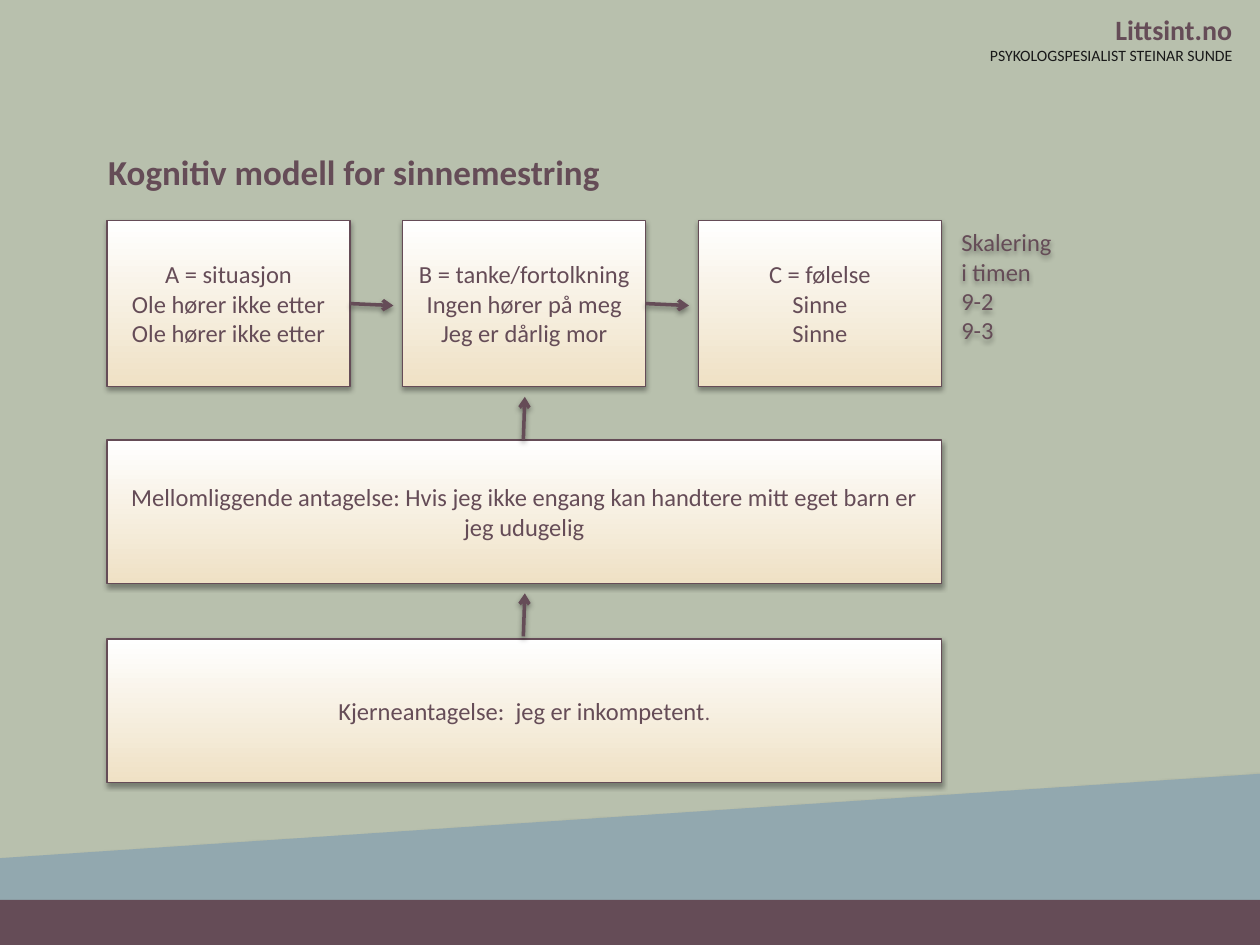
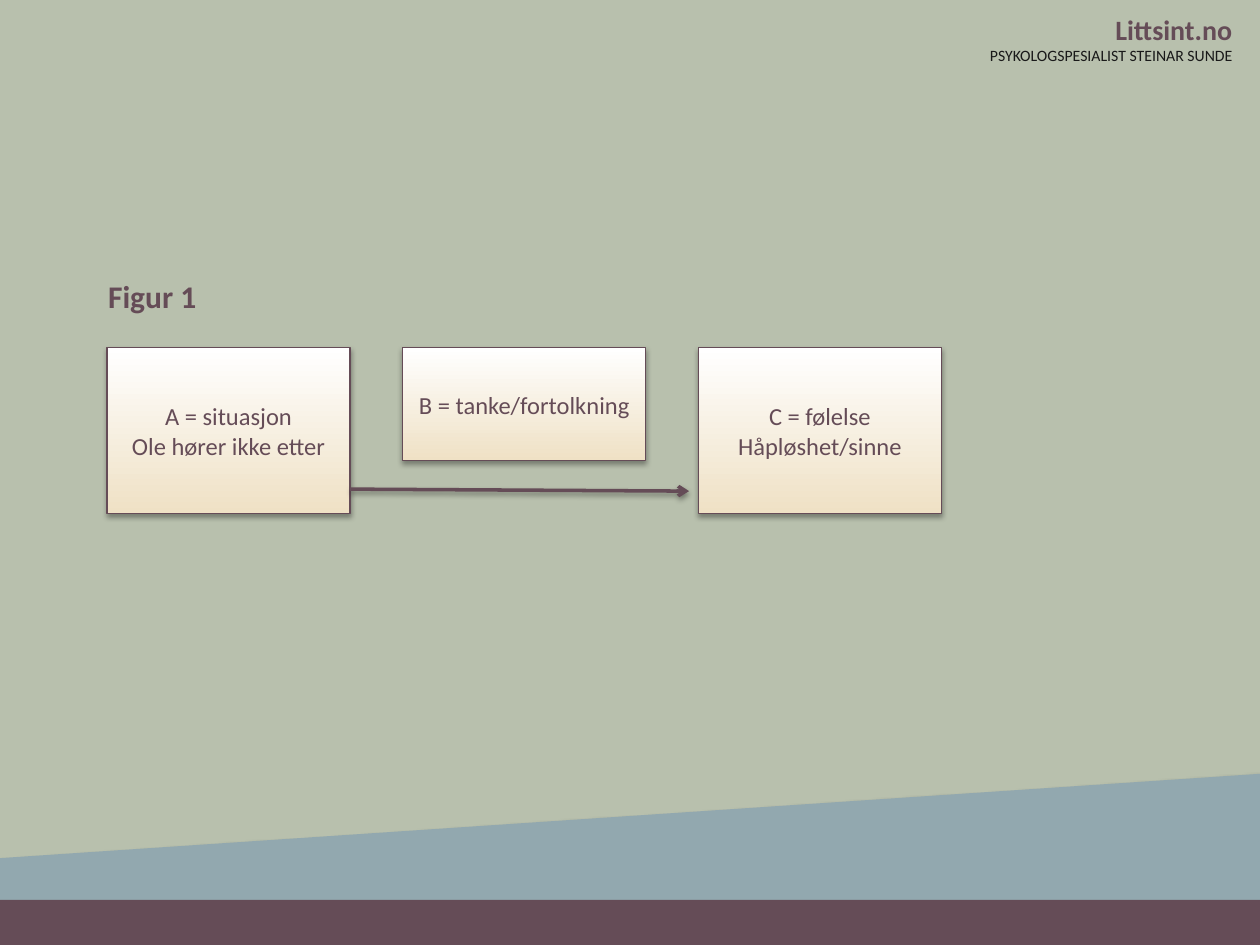
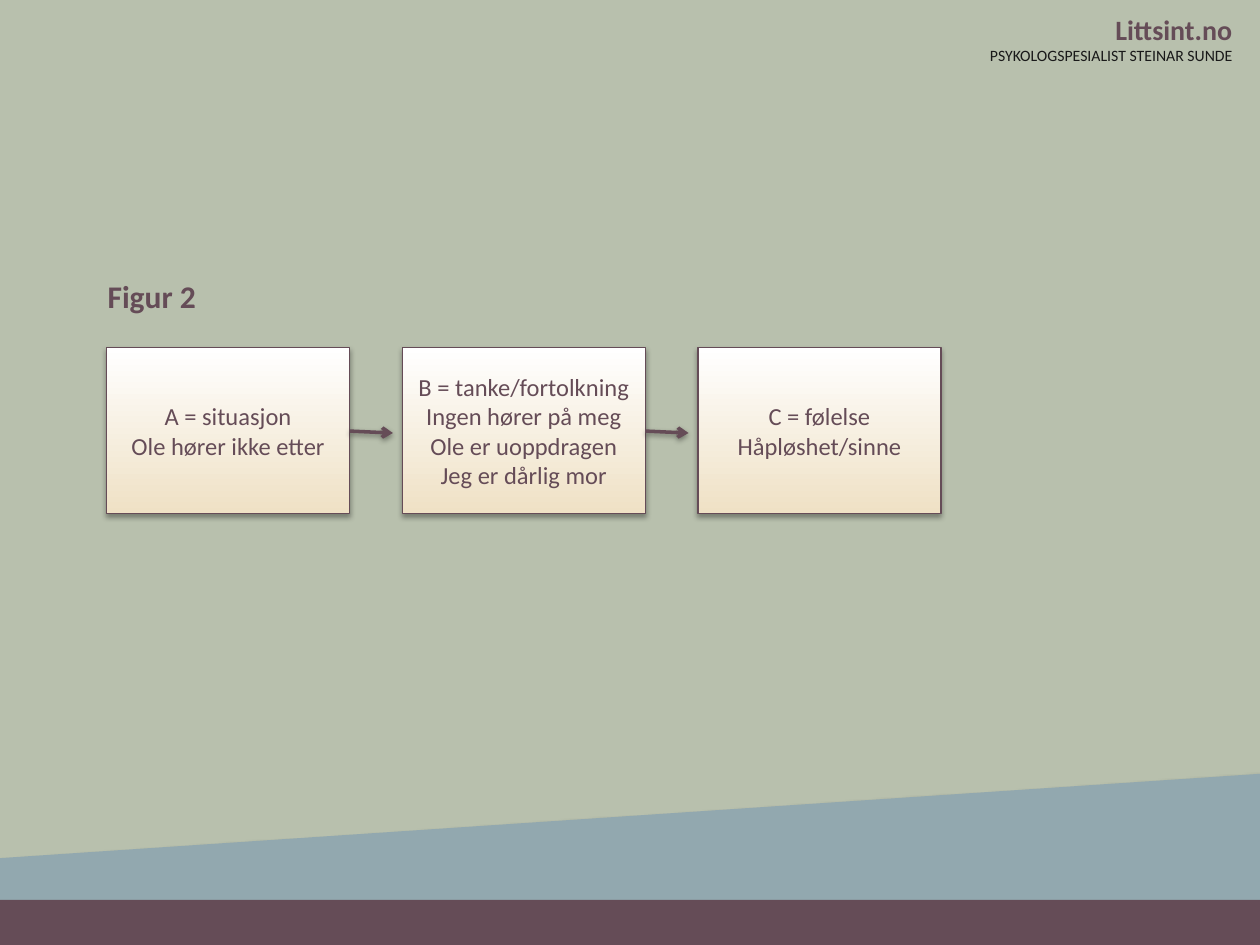
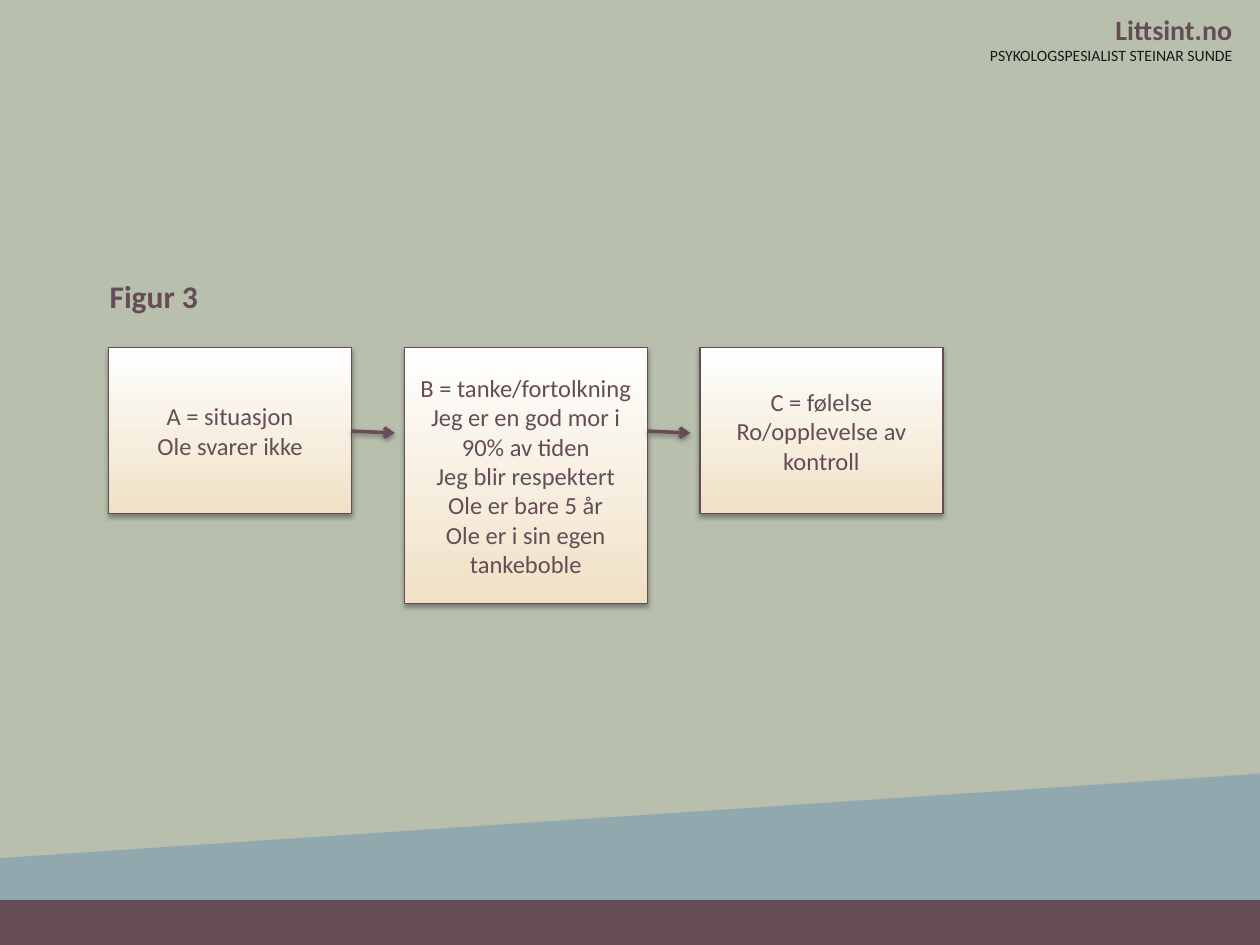
import lxml.etree
import pptx
import pptx.dml.color
import pptx.enum.dml
import pptx.enum.shapes
import pptx.enum.text
import pptx.oxml.ns
import pptx.util

Cm = pptx.util.Cm
Pt = pptx.util.Pt
RGBColor = pptx.dml.color.RGBColor
ALIGN = pptx.enum.text.PP_ALIGN
ANCHOR = pptx.enum.text.MSO_ANCHOR
RECTANGLE = pptx.enum.shapes.MSO_SHAPE.RECTANGLE
STRAIGHT = pptx.enum.shapes.MSO_CONNECTOR.STRAIGHT
qn = pptx.oxml.ns.qn

# Colours and font
PLUM = RGBColor(0x65, 0x4C, 0x57)
SAGE = RGBColor(0xB8, 0xC0, 0xAD)
BLUE = RGBColor(0x92, 0xA8, 0xAF)
CREAM = RGBColor(0xEF, 0xE1, 0xC5)
WHITE = RGBColor(0xFF, 0xFF, 0xFF)
BLACK = RGBColor(0x19, 0x19, 0x19)
FONT = "Calibri"

# Shared measures in centimetres
PAGE_WIDTH, PAGE_HEIGHT = 25.4, 19.05
BAND_TOP = 18.14
BOX_WIDTH, BOX_HEIGHT = 4.9, 3.35
COLUMN_STEP = 5.96
WIDE_WIDTH, WIDE_HEIGHT = 2 * COLUMN_STEP + BOX_WIDTH, 2.89
ARROW_LENGTH = 0.87


def cast_shadow(shape, opacity=35, distance=1.8):
    """Give a shape a soft shadow straight below it."""
    effects = lxml.etree.SubElement(shape._element.spPr, qn("a:effectLst"))
    shadow = lxml.etree.SubElement(
        effects, qn("a:outerShdw"), blurRad=str(Pt(3.1)),
        dist=str(Pt(distance)), dir="5400000", rotWithShape="0")
    colour = lxml.etree.SubElement(shadow, qn("a:srgbClr"), val="000000")
    lxml.etree.SubElement(colour, qn("a:alpha"), val=str(opacity * 1000))


def write_text(shape, lines, size, align=ALIGN.LEFT, bold=False):
    """Write one paragraph per line; a line is a text or a list of (text, size)."""
    frame = shape.text_frame
    frame.word_wrap = True
    for number, line in enumerate(lines):
        paragraph = frame.add_paragraph() if number else frame.paragraphs[0]
        paragraph.alignment = align
        for text, span_size in line if isinstance(line, list) else [(line, size)]:
            for row, part in enumerate(text.split("\n")):
                if row:
                    paragraph.add_line_break()
                span = paragraph.add_run()
                span.text = part
                span.font.name = FONT
                span.font.size = Pt(span_size)
                span.font.bold = bold
                span.font.color.rgb = PLUM


# Contents: boxes are (left, top, width, height, lines) and arrows are
# (from x, from y, to x, to y), with x measured from the left of box A
MIDDLE = COLUMN_STEP + BOX_WIDTH / 2
B_LEFT, C_LEFT = COLUMN_STEP, 2 * COLUMN_STEP
ROW_TOP, FIGURE_TOP = 4.44, 7.01


figures = [
    {
        "title": "Kognitiv modell for sinnemestring", "size": 20,
        "title_top": 2.9, "left": 2.16,
        "boxes": [
            (0, ROW_TOP, BOX_WIDTH, BOX_HEIGHT,
             ["A = situasjon", "Ole hører ikke etter", "Ole hører ikke etter"]),
            (B_LEFT, ROW_TOP, BOX_WIDTH, BOX_HEIGHT,
             ["B = tanke/fortolkning", "Ingen hører på meg", "Jeg er dårlig mor"]),
            (C_LEFT, ROW_TOP, BOX_WIDTH, BOX_HEIGHT,
             ["C = følelse", "Sinne", "Sinne"]),
            (0, 8.87, WIDE_WIDTH, WIDE_HEIGHT,
             ["Mellomliggende antagelse: Hvis jeg ikke engang kan handtere "
              "mitt eget barn er jeg udugelig"]),
            (0, 12.88, WIDE_WIDTH, WIDE_HEIGHT,
             [[("Kjerneantagelse:  jeg er inkompetent", 14), (".", 12)]]),
        ],
        "row_arrows": 6.12,
        "arrows": [(MIDDLE - 0.02, start, MIDDLE + 0.01, start - ARROW_LENGTH)
                   for start in (8.87, 12.83)],
    },
    {
        "title": "Figur 1", "size": 18, "title_top": 5.46, "left": 2.16,
        "boxes": [
            (0, FIGURE_TOP, BOX_WIDTH, BOX_HEIGHT,
             ["A = situasjon\nOle hører ikke etter"]),
            (B_LEFT, FIGURE_TOP, BOX_WIDTH, 2.28, ["B = tanke/fortolkning"]),
            (C_LEFT, FIGURE_TOP, BOX_WIDTH, BOX_HEIGHT,
             ["C = følelse", "Håpløshet/sinne"]),
        ],
        "row_arrows": None,
        "arrows": [(BOX_WIDTH, 9.86, BOX_WIDTH + COLUMN_STEP + ARROW_LENGTH, 9.9)],
    },
    {
        "title": "Figur 2", "size": 18, "title_top": 5.46, "left": 2.15,
        "boxes": [
            (0, FIGURE_TOP, BOX_WIDTH, BOX_HEIGHT,
             ["A = situasjon\nOle hører ikke etter"]),
            (B_LEFT, FIGURE_TOP, BOX_WIDTH, BOX_HEIGHT,
             ["B = tanke/fortolkning", "Ingen hører på meg",
              "Ole er uoppdragen", "Jeg er dårlig mor"]),
            (C_LEFT, FIGURE_TOP, BOX_WIDTH, BOX_HEIGHT,
             ["C = følelse", "Håpløshet/sinne"]),
        ],
        "row_arrows": 8.69,
        "arrows": [],
    },
    {
        "title": "Figur 3", "size": 18, "title_top": 5.46, "left": 2.19,
        "boxes": [
            (0, FIGURE_TOP, BOX_WIDTH, BOX_HEIGHT,
             ["A = situasjon\nOle svarer ikke"]),
            (B_LEFT, FIGURE_TOP, BOX_WIDTH, 5.16,
             ["B = tanke/fortolkning", "Jeg er en god mor i 90% av tiden",
              "Jeg blir respektert", "Ole er bare 5 år",
              "Ole er i sin egen tankeboble"]),
            (C_LEFT, FIGURE_TOP, BOX_WIDTH, BOX_HEIGHT,
             ["C = følelse", "Ro/opplevelse av kontroll"]),
        ],
        "row_arrows": 8.69,
        "arrows": [],
    },
]

deck = pptx.Presentation()
deck.slide_width = Cm(PAGE_WIDTH)
deck.slide_height = Cm(PAGE_HEIGHT)

for figure in figures:
    page = deck.slides.add_slide(deck.slide_layouts[6])
    shapes = page.shapes
    left = figure["left"]

    # Background and sloping band
    backdrop = shapes.add_shape(RECTANGLE, 0, 0, Cm(PAGE_WIDTH), Cm(BAND_TOP))
    outline = shapes.build_freeform(0, Cm(17.3))
    outline.add_line_segments(
        [(Cm(PAGE_WIDTH), Cm(15.6)), (Cm(PAGE_WIDTH), Cm(19)), (0, Cm(19))])
    slope = outline.convert_to_shape()
    for area, colour in ((backdrop, SAGE), (slope, BLUE)):
        area.fill.solid()
        area.fill.fore_color.rgb = colour
        area.line.fill.background()
        cast_shadow(area)

    # Sender in the top right corner
    sender = shapes.add_textbox(Cm(18.49), Cm(0.13), Cm(6.6), Cm(1.37))
    write_text(sender, ["Littsint.no", [("PSYKOLOGSPESIALIST STEINAR SUNDE", 9)]],
               16, ALIGN.RIGHT, bold=True)
    role = sender.text_frame.paragraphs[1].runs[0]
    role.font.bold = False
    role.font.color.rgb = BLACK

    # Bottom band
    band = shapes.add_shape(RECTANGLE, 0, Cm(BAND_TOP), Cm(PAGE_WIDTH),
                            Cm(PAGE_HEIGHT - BAND_TOP))
    band.shadow.inherit = False
    band.fill.solid()
    band.fill.fore_color.rgb = PLUM
    band.line.fill.background()

    # Boxes of the model
    for x, top, width, height, lines in figure["boxes"]:
        box = shapes.add_shape(RECTANGLE, Cm(left + x), Cm(top), Cm(width), Cm(height))
        box.fill.gradient()
        box.fill.gradient_angle = 90
        for stop, colour in zip(box.fill.gradient_stops, (CREAM, WHITE)):
            stop.color.rgb = colour
        box.line.color.rgb = PLUM
        box.line.width = Pt(0.75)
        cast_shadow(box)
        box.text_frame.vertical_anchor = ANCHOR.MIDDLE
        write_text(box, lines, 14, ALIGN.CENTER)

    # Arrows: between neighbouring columns, then the others
    arrows = list(figure["arrows"])
    if figure["row_arrows"]:
        for column in range(2):
            start = column * COLUMN_STEP + BOX_WIDTH
            arrows.append((start, figure["row_arrows"],
                           start + ARROW_LENGTH, figure["row_arrows"] + 0.04))
    for from_x, from_y, to_x, to_y in arrows:
        arrow = shapes.add_connector(STRAIGHT, Cm(left + from_x), Cm(from_y),
                                     Cm(left + to_x), Cm(to_y))
        arrow.line.color.rgb = PLUM
        arrow.line.width = Pt(2)
        lxml.etree.SubElement(arrow.line._get_or_add_ln(), qn("a:tailEnd"), type="arrow")
        cast_shadow(arrow, opacity=38, distance=1.6)

    # Title
    title = shapes.add_textbox(Cm(left - 0.23), Cm(figure["title_top"]),
                               Cm(WIDE_WIDTH), Cm(1.02))
    write_text(title, [figure["title"]], figure["size"], bold=True)

# Scaling note beside the first model
note = deck.slides[0].shapes.add_textbox(Cm(19.13), Cm(4.09), Cm(3.53), Cm(BOX_HEIGHT))
note.text_frame.vertical_anchor = ANCHOR.MIDDLE
write_text(note, ["Skalering", "i timen", "9-2", "9-3"], 14)
cast_shadow(note)

deck.save("out.pptx")
